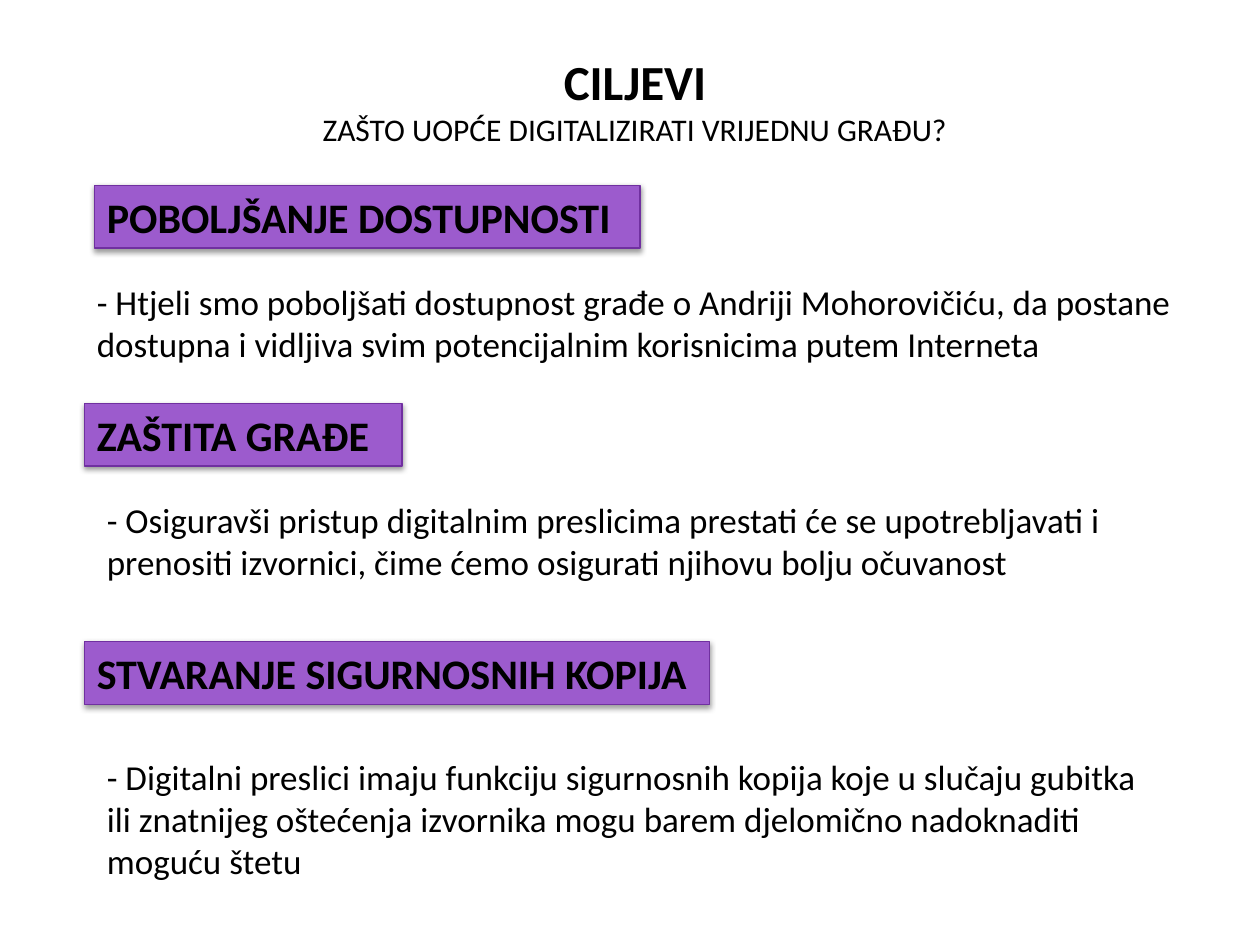
from lxml import etree
from pptx import Presentation
from pptx.dml.color import RGBColor
from pptx.enum import shapes, text
from pptx.oxml.ns import qn
from pptx.util import Inches, Pt

GOALS = [
    ("POBOLJŠANJE DOSTUPNOSTI", (0.75, 1.47, 4.33, 0.5),
     "- Htjeli smo poboljšati dostupnost građe o Andriji Mohorovičiću, da postane "
     "dostupna i vidljiva svim potencijalnim korisnicima putem Interneta",
     (0.67, 2.18, 8.82, 0.77)),
    ("ZAŠTITA GRAĐE", (0.67, 3.2, 2.52, 0.5),
     "- Osiguravši pristup digitalnim preslicima prestati će se upotrebljavati i "
     "prenositi izvornici, čime ćemo osigurati njihovu bolju očuvanost",
     (0.75, 3.91, 8.5, 0.77)),
    ("STVARANJE SIGURNOSNIH KOPIJA", (0.67, 5.09, 4.96, 0.5),
     "- Digitalni preslici imaju funkciju sigurnosnih kopija koje u slučaju gubitka "
     "ili znatnijeg oštećenja izvornika mogu barem djelomično nadoknaditi moguću štetu",
     (0.75, 5.95, 8.43, 1.11)),
]


def color(value):
    return RGBColor.from_string(value)


def write(sp, lines, align=text.PP_ALIGN.LEFT):
    """Fill a shape with (wording, size, bold) lines."""
    tf = sp.text_frame
    tf.word_wrap = True
    tf.auto_size = text.MSO_AUTO_SIZE.SHAPE_TO_FIT_TEXT
    tf.vertical_anchor = text.MSO_ANCHOR.TOP
    tf.text = "\n".join(wording for wording, _, _ in lines)
    for p, (_, size, bold) in zip(tf.paragraphs, lines):
        p.alignment = align
        for r in p.runs:
            r.font.name = "Calibri"
            r.font.size = Pt(size)
            r.font.bold = bold
            r.font.color.rgb = color("000000")


def add_soft_shadow(sp):
    sp.shadow.inherit = False
    effects = sp._element.spPr.find(qn("a:effectLst"))
    shadow = etree.SubElement(effects, qn("a:outerShdw"), blurRad="40000",
                              dist="20000", dir="5400000", rotWithShape="0")
    black = etree.SubElement(shadow, qn("a:srgbClr"), val="000000")
    etree.SubElement(black, qn("a:alpha"), val="38000")


def add_text(s, box, lines, align=text.PP_ALIGN.LEFT):
    sp = s.shapes.add_textbox(*map(Inches, box))
    write(sp, lines, align)


def add_heading(s, box, wording):
    sp = s.shapes.add_shape(shapes.MSO_SHAPE.RECTANGLE, *map(Inches, box))
    sp.fill.solid()
    sp.fill.fore_color.rgb = color("9C5BCD")
    sp.line.color.rgb = color("7030A0")
    sp.line.width = Pt(0.75)
    add_soft_shadow(sp)
    write(sp, [(wording, 24, True)])


def main():
    prs = Presentation()
    prs.slide_width, prs.slide_height = Inches(10), Inches(7.5)
    s = prs.slides.add_slide(prs.slide_layouts[6])
    add_text(s, (0.75, 0.36, 8.58, 0.88),
             [("CILJEVI", 28, True),
              ("ZAŠTO UOPĆE DIGITALIZIRATI VRIJEDNU GRAĐU?", 18, False)],
             text.PP_ALIGN.CENTER)
    for heading, heading_box, reason, reason_box in GOALS:
        add_heading(s, heading_box, heading)
        add_text(s, reason_box, [(reason, 20, False)])
    prs.save("out.pptx")


if __name__ == "__main__":
    main()
